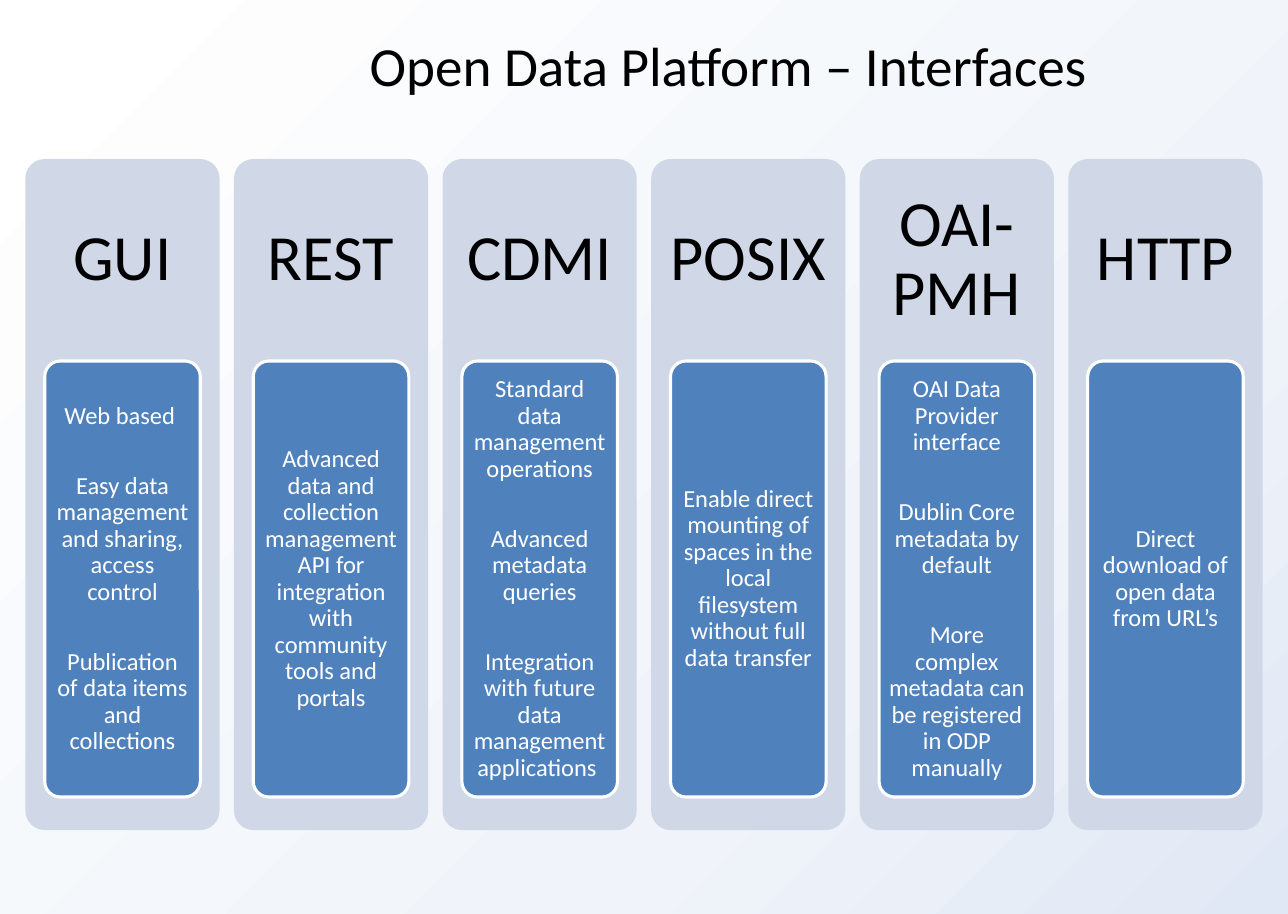
from lxml.etree import SubElement
from pptx import Presentation
from pptx.dml.color import RGBColor
from pptx.enum.shapes import MSO_SHAPE as Shape
from pptx.enum.text import MSO_ANCHOR as Anchor, PP_ALIGN as Align
from pptx.oxml.ns import qn
from pptx.util import Inches, Pt

COLORS = {"ink": "000000", "white": "FFFFFF", "column": "D0D8E8", "card": "4F81BD"}
BACKGROUND = [(3, "FFFFFF"), (68, "F0F4FA"), (100, "E1E8F5")]
FONT = "Calibri"
COLUMN_PITCH = 1.89
INTERFACES = [
    ("GUI", ["Web based ",
             "Easy data management and sharing, access control",
             "Publication of data items and collections"]),
    ("REST", ["Advanced data and collection management API for integration "
              "with community tools and portals"]),
    ("CDMI", ["Standard data management operations",
              "Advanced metadata queries",
              "Integration with future data management applications "]),
    ("POSIX", ["Enable direct mounting of spaces in the local filesystem "
               "without full data transfer"]),
    ("OAI-PMH", ["OAI Data Provider interface",
                 "Dublin Core metadata by default",
                 "More complex metadata can be registered in ODP manually"]),
    ("HTTP", ["Direct download of open data from URL’s"]),
]


def color(name):
    return RGBColor.from_string(COLORS[name])


def set_frame(frame, anchor, side, top):
    settings = {"word_wrap": True, "vertical_anchor": anchor,
                "margin_left": Inches(side), "margin_right": Inches(side),
                "margin_top": Inches(top), "margin_bottom": Inches(top)}
    for name, value in settings.items():
        setattr(frame, name, value)


def write(frame, texts, size, ink, spacing=1.0, gap=0):
    for i, text in enumerate(texts):
        paragraph = frame.paragraphs[0] if i == 0 else frame.add_paragraph()
        paragraph.alignment = Align.CENTER
        paragraph.line_spacing = spacing
        paragraph.space_before = Pt(gap if i else 0)
        run = paragraph.add_run()
        run.text = text
        for name, value in {"name": FONT, "size": Pt(size), "bold": False}.items():
            setattr(run.font, name, value)
        run.font.color.rgb = color(ink)


def add_panel(slide, box, fill):
    panel = slide.shapes.add_shape(Shape.ROUNDED_RECTANGLE, *map(Inches, box))
    panel.adjustments[0] = 0.1
    panel.shadow.inherit = False
    panel.fill.solid()
    panel.fill.fore_color.rgb = color(fill)
    panel.line.fill.background()
    return panel


def paint_background(slide):
    fill = slide.background.fill
    fill.gradient()
    fill.gradient_angle = 315
    stops = next(slide.element.iter(qn("a:gsLst")))
    for stop in list(stops):
        stops.remove(stop)
    for percent, shade in BACKGROUND:
        stop = SubElement(stops, qn("a:gs"), pos=str(percent * 1000))
        SubElement(stop, qn("a:srgbClr"), val=shade)


def place_title(slide, box):
    title = slide.shapes.title
    title.left, title.top, title.width, title.height = map(Inches, box)
    set_frame(title.text_frame, Anchor.TOP, 0.11, 0.05)
    write(title.text_frame, ["Open Data Platform – Interfaces "], 36, "ink")


def add_column(slide, box, name, features):
    left, top, width, height = box
    add_panel(slide, box, "column")
    # Interface name in the upper part
    heading = slide.shapes.add_textbox(*map(Inches, (left, top, width, 1.83)))
    set_frame(heading.text_frame, Anchor.MIDDLE, 0.16, 0.17)
    write(heading.text_frame, [name], 42, "ink", 0.9)
    # Feature card below it
    card = add_panel(slide, (left + 0.175, top + 1.83, width - 0.35, height - 2.13), "card")
    card.line.color.rgb = color("white")
    card.line.width = Pt(2)
    set_frame(card.text_frame, Anchor.MIDDLE, 0.05, 0.03)
    write(card.text_frame, features, 16, "white", 0.9, 28.5)


def main():
    deck = Presentation()
    deck.slide_width, deck.slide_height = Inches(11.67), Inches(8.28)
    slide = deck.slides.add_slide(deck.slide_layouts[5])
    paint_background(slide)
    place_title(slide, (1.97, 0.23, 9.37, 1.03))
    for i, (name, features) in enumerate(INTERFACES):
        add_column(slide, (0.23 + i * COLUMN_PITCH, 1.44, 1.76, 6.08), name, features)
    deck.save("out.pptx")


if __name__ == "__main__":
    main()
